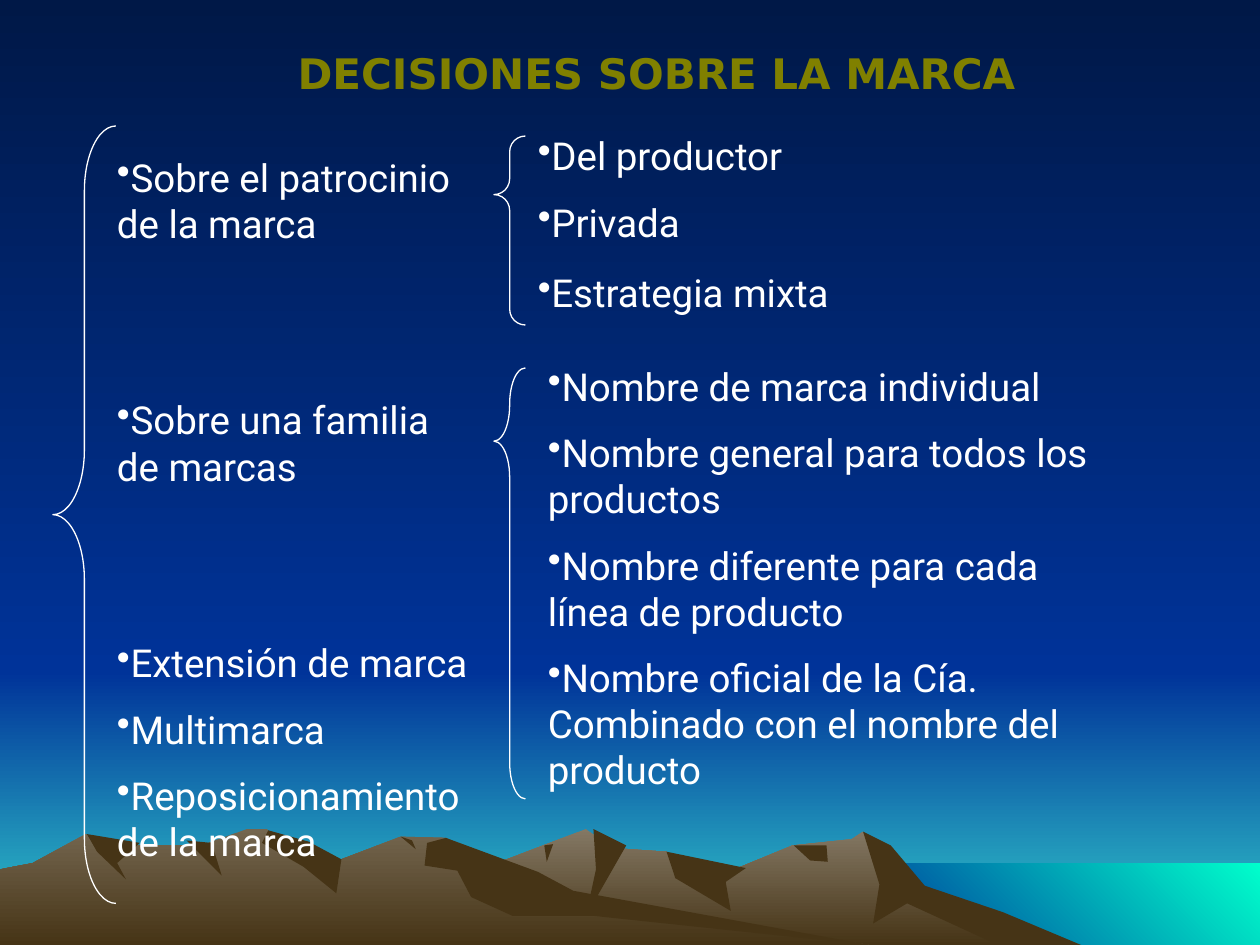
from lxml import etree
from pptx import Presentation
from pptx.dml.color import RGBColor
from pptx.enum.shapes import MSO_SHAPE
from pptx.enum.text import PP_ALIGN
from pptx.oxml.ns import qn
from pptx.util import Pt

PX = 9144  # EMU per px, 100 px to the inch
WIDTH, HEIGHT, HORIZON = 1000, 750, 533
SEA_LEFT, SEA_TOP = 683, 685
LEFT_BRACE = MSO_SHAPE.LEFT_BRACE
CENTER = PP_ALIGN.CENTER

NIGHT = RGBColor(0x00, 0x18, 0x47)
BLUE = RGBColor(0x00, 0x33, 0x99)
TURQUOISE = RGBColor(0x33, 0xCC, 0xCC)
SEA_GREEN = RGBColor(0x00, 0xFF, 0xCC)
PALE_ROCK = RGBColor(0x84, 0x78, 0x64)
ROCK = RGBColor(0x74, 0x66, 0x4F)
DARK_ROCK = RGBColor(0x46, 0x34, 0x16)
OLIVE = RGBColor(0x80, 0x80, 0x00)
WHITE = RGBColor(0xFF, 0xFF, 0xFF)

DOWN, TO_LOWER_RIGHT_UP = 270, 45  # gradient directions, counter-clockwise
GAP, GROUP_GAP = 11.5, 86  # space before an item, in points

# Text: box, then (space before, wording) for each item
TITLE = ("DECISIONES SOBRE LA MARCA", (175, 33, 692, 50))
LISTS = [
    ((83, 117, 308, 597), [
        (0, "Sobre el patrocinio de la marca"),
        (GROUP_GAP, "Sobre una familia de marcas"),
        (GROUP_GAP, "Extensión de marca"),
        (GAP, "Multimarca"),
        (GAP, "Reposicionamiento de la marca"),
    ]),
    ((417, 100, 317, 162), [
        (0, "Del productor"),
        (GAP, "Privada"),
        (14, "Estrategia mixta"),
    ]),
    ((425, 283, 458, 358), [
        (0, "Nombre de marca individual"),
        (GAP, "Nombre general para todos los productos"),
        (GAP, "Nombre diferente para cada línea de producto"),
        (GAP, "Nombre oficial de la Cía. Combinado con el nombre del producto"),
    ]),
]

# Braces: box, curl size, height of the point
BRACES = [
    ((42, 100, 50, 617), 1.03, 0.5),
    ((392, 108, 25, 150), 0.5, 0.31),
    ((392, 292, 25, 342), 1.14, 0.17),
]

# Landscape bands: left, top, right, bottom, gradient ends, direction
BANDS = [
    (0, HORIZON, WIDTH, HEIGHT, (BLUE, TURQUOISE), DOWN),
    (0, 0, WIDTH, HORIZON, (NIGHT, BLUE), DOWN),
    (SEA_LEFT, SEA_TOP, WIDTH, HEIGHT, (BLUE, SEA_GREEN), TO_LOWER_RIGHT_UP),
]

# Mountains: gradient top, ridge line and the shadows on it
RANGES = [
    (PALE_ROCK,
     [(258, HEIGHT), (327, 709), (405, 681), (465, 658), (486, 673), (529, 676), (566, 697),
      (629, 671), (676, 666), (685, 660), (723, 698), (821, HEIGHT)],
     [
         [(685, 660), (707, 671), (734, 703), (796, 724), (858, HEIGHT), (792, HEIGHT),
          (720, 717), (693, 733), (698, 702)],
         [(471, 658), (497, 671), (465, 727), (473, 690)],
         [(529, 676), (592, 689), (576, 700), (580, 723), (536, 697)],
         [(630, 671), (656, 671), (657, 684), (643, 683)],
         [(432, 671), (439, 670), (434, 684)],
     ]),
    (ROCK,
     [(0, HEIGHT), (0, 690), (26, 685), (68, 662), (94, 671), (160, 671), (196, 658),
      (212, 658), (236, 681), (271, 682), (318, 664), (354, 665), (432, 712), (690, HEIGHT)],
     [
         [(213, 659), (245, 668), (271, 682), (267, 709), (241, 688), (208, 669)],
         [(339, 669), (354, 665), (427, 692), (455, 707), (690, HEIGHT), (472, 727),
          (407, 727), (374, 712), (363, 691), (337, 687)],
         [(318, 664), (327, 667), (330, 674)],
         [(148, 667), (168, 669), (176, 695)],
         [(69, 662), (111, 669), (93, 685), (100, 698), (77, 676)],
     ]),
]


def emu(box):
    return [length * PX for length in box]


def fill_gradient(fill, ends, direction):
    fill.gradient()
    fill.gradient_angle = direction
    for stop, color in zip(fill.gradient_stops, ends):
        stop.color.rgb = color


def add_outline(slide, points):
    builder = slide.shapes.build_freeform(*points[0], scale=PX)
    builder.add_line_segments(points[1:], close=True)
    outline = builder.convert_to_shape()
    outline.shadow.inherit = False
    outline.line.fill.background()
    return outline


def add_text_frame(slide, box):
    frame = slide.shapes.add_textbox(*emu(box)).text_frame
    frame.word_wrap = True
    return frame


def add_run(paragraph, wording, font_name, size, color):
    run = paragraph.add_run()
    run.text = wording
    run.font.name = font_name
    run.font.size = Pt(size)
    run.font.color.rgb = color
    return run


prs = Presentation()
prs.slide_width, prs.slide_height = emu((WIDTH, HEIGHT))
slide = prs.slides.add_slide(prs.slide_layouts[6])
fill_gradient(slide.background.fill, (NIGHT, BLUE), DOWN)

# Sky and sea
for left, top, right, bottom, ends, direction in BANDS:
    band = add_outline(slide, [(left, top), (right, top), (right, bottom), (left, bottom)])
    fill_gradient(band.fill, ends, direction)

# Mountains
for rock, ridge, shadows in RANGES:
    fill_gradient(add_outline(slide, ridge).fill, (rock, DARK_ROCK), DOWN)
    for shadow in shadows:
        shade = add_outline(slide, shadow)
        shade.fill.solid()
        shade.fill.fore_color.rgb = DARK_ROCK

# Title
wording, box = TITLE
heading = add_text_frame(slide, box).paragraphs[0]
heading.alignment = CENTER
add_run(heading, wording, "DejaVu Sans", 24, OLIVE).font.bold = True

# Braces
for box, curl, point in BRACES:
    brace = slide.shapes.add_shape(LEFT_BRACE, *emu(box))
    brace.shadow.inherit = False
    brace.adjustments[0], brace.adjustments[1] = curl, point
    brace.fill.background()
    brace.line.color.rgb = WHITE
    brace.line.width = Pt(0.75)

# Bulleted lists
for box, items in LISTS:
    frame = add_text_frame(slide, box)
    for index, (space, wording) in enumerate(items):
        item = frame.add_paragraph() if index else frame.paragraphs[0]
        etree.SubElement(item._p.get_or_add_pPr(), qn("a:buChar")).set("char", "•")
        if space:
            item.space_before = Pt(space)
        add_run(item, wording, "Roboto", 22, WHITE)

prs.save("out.pptx")
